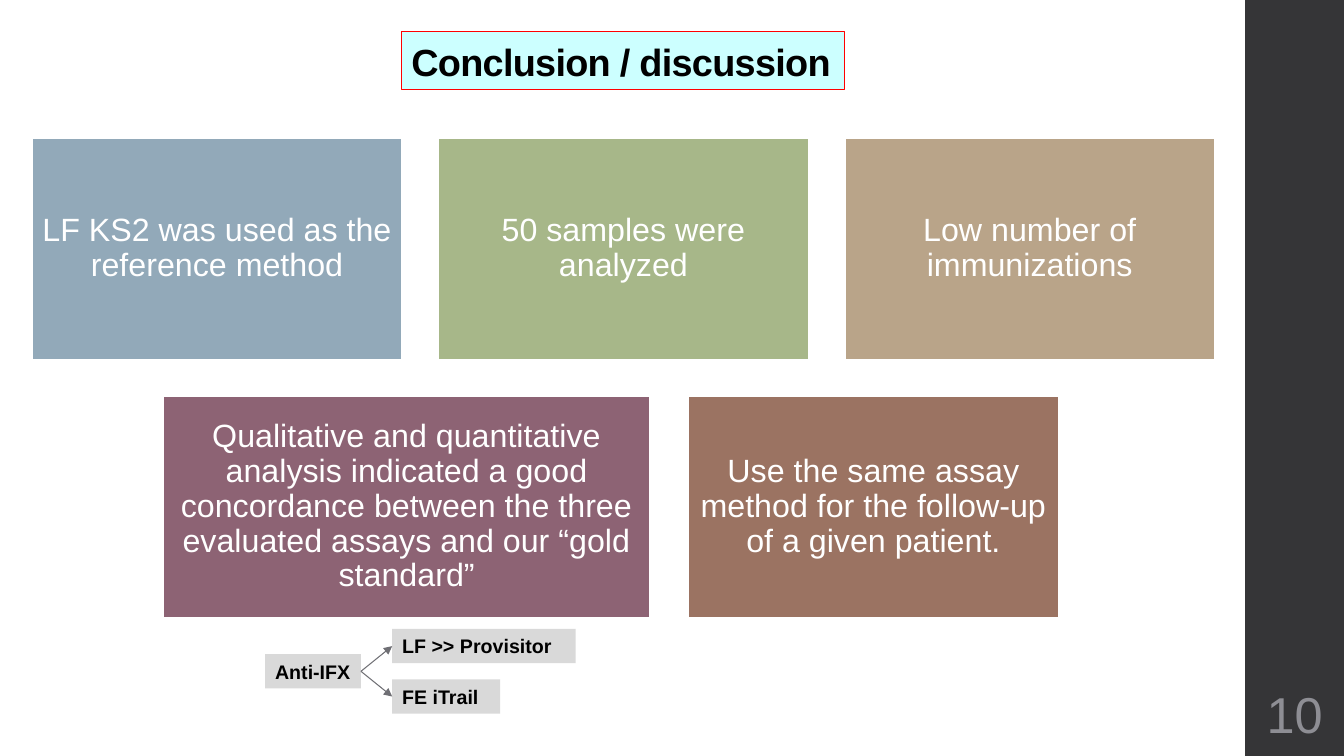
from lxml import etree
from pptx import Presentation
from pptx.dml.color import RGBColor
from pptx.enum.shapes import MSO_CONNECTOR, MSO_SHAPE
from pptx.enum.text import MSO_ANCHOR, MSO_AUTO_SIZE, PP_ALIGN
from pptx.oxml.ns import qn
from pptx.util import Inches, Pt

RECT = MSO_SHAPE.RECTANGLE
STRAIGHT = MSO_CONNECTOR.STRAIGHT
MIDDLE, BOTTOM = MSO_ANCHOR.MIDDLE, MSO_ANCHOR.BOTTOM
LEFT, CENTER = PP_ALIGN.LEFT, PP_ALIGN.CENTER
NO_FIT, GROW = MSO_AUTO_SIZE.NONE, MSO_AUTO_SIZE.SHAPE_TO_FIT_TEXT
TITLE_ONLY = 5
SIDE_LEFT, SIDE_WIDTH = 12.35, 0.98
CARD_HEIGHT = 2.2

TOP_CARDS = [
    ("LF KS2 was used as the reference method", 3.67, "92A9B9"),
    ("50 samples were analyzed", 3.67, "A7B789"),
    ("Low number of immunizations", 3.67, "B9A489"),
]
BOTTOM_CARDS = [
    ("Qualitative and quantitative analysis indicated a good concordance "
     "between the three evaluated assays and our “gold standard”", 4.83, "8D6374"),
    ("Use the same assay method for the follow-up of a given patient.", 3.67, "9B7362"),
]


def rgb(value):
    return RGBColor.from_string(value)


def write(sp, text, size, color, bold=False, align=LEFT, anchor=MIDDLE, spacing=1.0):
    tf = sp.text_frame
    tf.text = text
    tf.word_wrap = True
    tf.auto_size = NO_FIT
    tf.vertical_anchor = anchor
    p = tf.paragraphs[0]
    p.alignment = align
    p.line_spacing = spacing
    r = p.runs[0]
    r.font.name = "Arial"
    r.font.size = Pt(size)
    r.font.bold = bold
    r.font.color.rgb = rgb(color)
    return r


def add_box(s, left, top, width, height, fill, line=None):
    sp = s.shapes.add_shape(RECT, Inches(left), Inches(top), Inches(width), Inches(height))
    sp.shadow.inherit = False
    sp.fill.solid()
    sp.fill.fore_color.rgb = rgb(fill)
    if line:
        sp.line.color.rgb = rgb(line)
        sp.line.width = Pt(1.1)
    else:
        sp.line.fill.background()
    return sp


def add_sidebar(s, left, width, number):
    add_box(s, left, 0, width, 7.5, "353537")
    sp = s.shapes.add_textbox(Inches(left), Inches(6.75), Inches(width), Inches(0.65))
    write(sp, number, 36, "8E8E94", align=CENTER)
    tf = sp.text_frame
    tf.margin_left = tf.margin_right = tf.margin_top = tf.margin_bottom = Inches(0.05)


def add_title(s, left, top, width, height):
    sp = s.shapes.title
    sp.left, sp.top = Inches(left), Inches(top)
    sp.width, sp.height = Inches(width), Inches(height)
    sp.fill.solid()
    sp.fill.fore_color.rgb = rgb("CCFFFF")
    sp.line.color.rgb = rgb("FF0000")
    sp.line.width = Pt(0.75)
    r = write(sp, "Conclusion / discussion", 27, "000000", True, anchor=BOTTOM, spacing=0.9)
    r.font._element.set("spc", "-50")


def add_card_row(s, left, top, gap, cards):
    for text, width, fill in cards:
        sp = add_box(s, left, top, width, CARD_HEIGHT, fill, "FFFFFF")
        write(sp, text, 23, "FFFFFF", align=CENTER, spacing=0.9)
        tf = sp.text_frame
        tf.margin_left = tf.margin_right = tf.margin_top = tf.margin_bottom = Inches(0.1)
        left += width + gap


def add_label(s, left, top, width, text):
    sp = add_box(s, left, top, width, 0.34, "D9D9D9")
    write(sp, text, 14, "000000", True)
    sp.text_frame.word_wrap = False
    sp.text_frame.auto_size = GROW
    return sp


def add_arrow(s, source, target):
    cxn = s.shapes.add_connector(STRAIGHT, 0, 0, 0, 0)
    cxn.begin_connect(source, 3)
    cxn.end_connect(target, 1)
    cxn.line.color.rgb = rgb("6F6F74")
    cxn.line.width = Pt(0.75)
    etree.SubElement(cxn.line._get_or_add_ln(), qn("a:tailEnd"), type="triangle")
    etree.SubElement(cxn._element.spPr, qn("a:effectLst"))


def add_assay_branch(s, left, top):
    root = add_label(s, left, top + 0.25, 0.95, "Anti-IFX")
    branches = [("LF >> Provisitor", 1.82), ("FE iTrail", 1.07)]
    for i, (text, width) in enumerate(branches):
        target = add_label(s, left + 1.26, top + i * 0.5, width, text)
        add_arrow(s, root, target)


def main():
    prs = Presentation()
    prs.slide_width, prs.slide_height = Inches(13.33), Inches(7.5)
    s = prs.slides.add_slide(prs.slide_layouts[TITLE_ONLY])
    add_sidebar(s, SIDE_LEFT, SIDE_WIDTH, "10")
    add_title(s, 3.98, 0.31, 4.4, 0.58)
    add_card_row(s, 0.32, 1.37, 0.36, TOP_CARDS)
    add_card_row(s, 1.62, 3.93, 0.38, BOTTOM_CARDS)
    add_assay_branch(s, 2.63, 6.24)
    prs.save("out.pptx")


if __name__ == "__main__":
    main()
